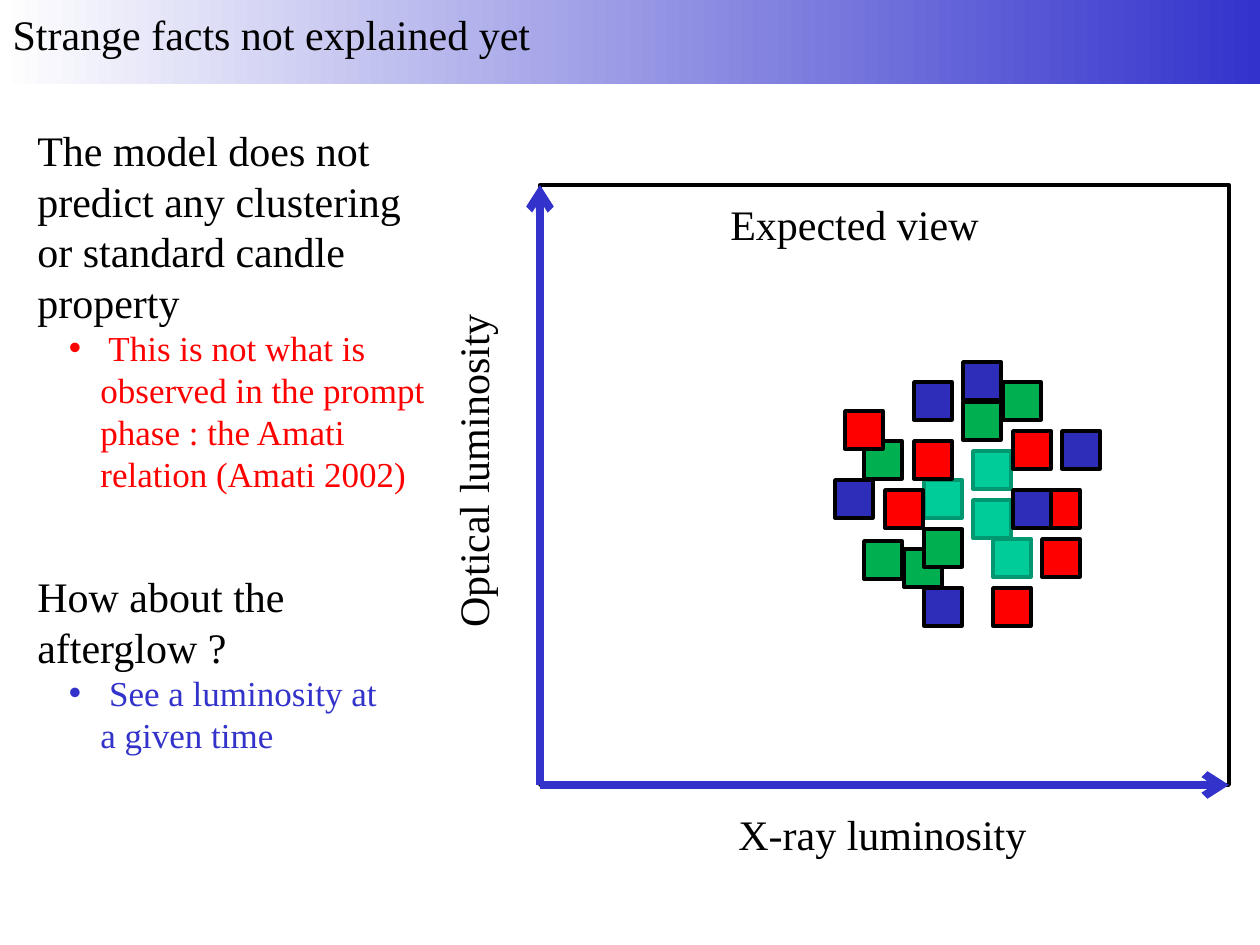
from dataclasses import dataclass

from lxml.etree import SubElement
from pptx import Presentation
from pptx.dml.color import RGBColor
from pptx.enum.shapes import MSO_CONNECTOR, MSO_SHAPE
from pptx.enum.text import MSO_ANCHOR, MSO_AUTO_SIZE, PP_ALIGN
from pptx.oxml.ns import qn
from pptx.util import Emu, Pt

BLACK = RGBColor(0x00, 0x00, 0x00)
WHITE = RGBColor(0xFF, 0xFF, 0xFF)
BLUE = RGBColor(0x33, 0x33, 0xCC)
DARK_BLUE = RGBColor(0x2D, 0x2D, 0xB9)
GREEN = RGBColor(0x00, 0xB0, 0x50)
TEAL = RGBColor(0x00, 0xCC, 0x99)
DARK_TEAL = RGBColor(0x00, 0x97, 0x71)
RED = RGBColor(0xFF, 0x00, 0x00)
FONT = "Times New Roman"
SQUARE = 38


@dataclass(frozen=True)
class Box:
    x: int
    y: int
    w: int
    h: int


@dataclass(frozen=True)
class Cluster:
    fill: RGBColor
    line: RGBColor
    points: tuple[tuple[int, int], ...]


@dataclass(frozen=True)
class Label:
    text: str
    box: Box
    vert: str = "horz"


@dataclass(frozen=True)
class Topic:
    box: Box
    heading: str
    bullet: str
    color: RGBColor


PLOT = Box(540, 185, 689, 600)
CLUSTERS = (
    Cluster(GREEN, BLACK, ((864, 541), (904, 549), (864, 441), (924, 529),
                           (963, 402), (1003, 382))),
    Cluster(TEAL, DARK_TEAL, ((993, 539), (924, 480), (973, 500), (973, 451))),
    Cluster(RED, BLACK, ((1013, 431), (914, 441), (993, 588), (1042, 490),
                         (885, 490), (845, 411), (1042, 539))),
    Cluster(DARK_BLUE, BLACK, ((1062, 431), (1013, 490), (914, 382), (835, 480),
                               (924, 588), (963, 362))),
)
LABELS = (
    Label("X-ray luminosity", Box(726, 800, 316, 63)),
    Label("Optical luminosity", Box(441, 302, 77, 329), "vert270"),
    Label("Expected view", Box(718, 190, 276, 63)),
)
TOPICS = (
    Topic(Box(25, 116, 427, 386),
          "The model does not predict any clustering or standard candle property",
          " This is not what is observed in the prompt phase : the Amati relation (Amati 2002)",
          RED),
    Topic(Box(25, 562, 367, 199), "How about the afterglow ?",
          " See a luminosity at a given time", BLUE),
)


def px(n: int) -> Emu:
    """Turn pixels into EMU."""
    return Emu(round(n * 914400 / 126))


def place(sp, box: Box) -> None:
    """Move and size a shape."""
    sp.left, sp.top, sp.width, sp.height = map(px, (box.x, box.y, box.w, box.h))


def add_rect(s, box: Box, fill=None, line=None, weight: float = 2):
    """Add a rectangle with optional fill and outline."""
    sp = s.shapes.add_shape(MSO_SHAPE.RECTANGLE, *map(px, (box.x, box.y, box.w, box.h)))
    sp.shadow.inherit = False
    if fill is not None:
        sp.fill.solid()
        sp.fill.fore_color.rgb = fill
    if line is None:
        sp.line.fill.background()
    else:
        sp.line.color.rgb = line
        sp.line.width = Pt(weight)
    return sp


def add_title_bar(s) -> None:
    """Add the gradient band behind the title."""
    sp = add_rect(s, Box(0, 0, 1260, 84))
    sp.fill.gradient()
    sp.fill.gradient_angle = 0
    for stop, color, position in zip(sp.fill.gradient_stops, (WHITE, BLUE), (0, 1)):
        stop.color.rgb = color
        stop.position = position
    s.shapes.title.element.addprevious(sp.element)


def add_axis(s, start: tuple[int, int], end: tuple[int, int]) -> None:
    """Add an axis with an arrowhead at its end."""
    cxn = s.shapes.add_connector(MSO_CONNECTOR.STRAIGHT, *map(px, start + end))
    cxn.line.color.rgb = BLUE
    cxn.line.width = Pt(4.5)
    SubElement(cxn.line._get_or_add_ln(), qn("a:tailEnd"), type="arrow")
    SubElement(cxn.element.spPr, qn("a:effectLst"))


def setup_frame(sp, wrap: bool = False):
    """Set the text frame's wrapping, anchor and insets."""
    tf = sp.text_frame
    tf.word_wrap = wrap
    tf.auto_size = MSO_AUTO_SIZE.SHAPE_TO_FIT_TEXT
    tf.vertical_anchor = MSO_ANCHOR.TOP
    tf.margin_left = tf.margin_right = Pt(7.2)
    tf.margin_top, tf.margin_bottom = px(9), px(3)
    return tf


def write(p, text: str, *, size: int = 24, color: RGBColor = BLACK,
          bullet: bool = False) -> None:
    """Write a formatted run into a paragraph."""
    p.alignment = PP_ALIGN.LEFT
    p.line_spacing = Pt(size * 1.2)
    p.space_before = p.space_after = Pt(0)
    r = p.add_run()
    r.text = text
    r.font.name, r.font.size = FONT, Pt(size)
    r.font.color.rgb = color
    if bullet:
        p.level = 1
        pPr = p._p.get_or_add_pPr()
        pPr.set("marL", "457200")
        pPr.set("indent", "-228600")
        SubElement(pPr, qn("a:buFont"), typeface="Arial")
        SubElement(pPr, qn("a:buChar"), char="•")


def add_label(s, label: Label) -> None:
    """Add a one-line label of the plot."""
    sp = s.shapes.add_textbox(0, 0, 0, 0)
    write(setup_frame(sp).paragraphs[0], label.text)
    sp.element.txBody.bodyPr.set("vert", label.vert)
    place(sp, label.box)


def add_topic(s, topic: Topic) -> None:
    """Add a heading with its bullet."""
    sp = s.shapes.add_textbox(0, 0, 0, 0)
    tf = setup_frame(sp, wrap=True)
    write(tf.paragraphs[0], topic.heading)
    write(tf.add_paragraph(), topic.bullet, size=20, color=topic.color, bullet=True)
    place(sp, topic.box)


def main() -> None:
    """Build and save the slide."""
    prs = Presentation()
    prs.slide_width, prs.slide_height = px(1260), px(945)
    s = prs.slides.add_slide(prs.slide_layouts[5])
    add_title_bar(s)
    title = s.shapes.title
    place(title, Box(0, 0, 548, 63))
    write(setup_frame(title).paragraphs[0], "Strange facts not explained yet")

    add_rect(s, PLOT, WHITE, BLACK, 2.25)
    origin = (PLOT.x, PLOT.y + PLOT.h)
    add_axis(s, origin, (PLOT.x + PLOT.w, origin[1]))
    add_axis(s, origin, (PLOT.x, PLOT.y))
    for label in LABELS:
        add_label(s, label)
    for cluster in CLUSTERS:
        for x, y in cluster.points:
            add_rect(s, Box(x, y, SQUARE, SQUARE), cluster.fill, cluster.line)
    for topic in TOPICS:
        add_topic(s, topic)
    prs.save("out.pptx")


if __name__ == "__main__":
    main()
